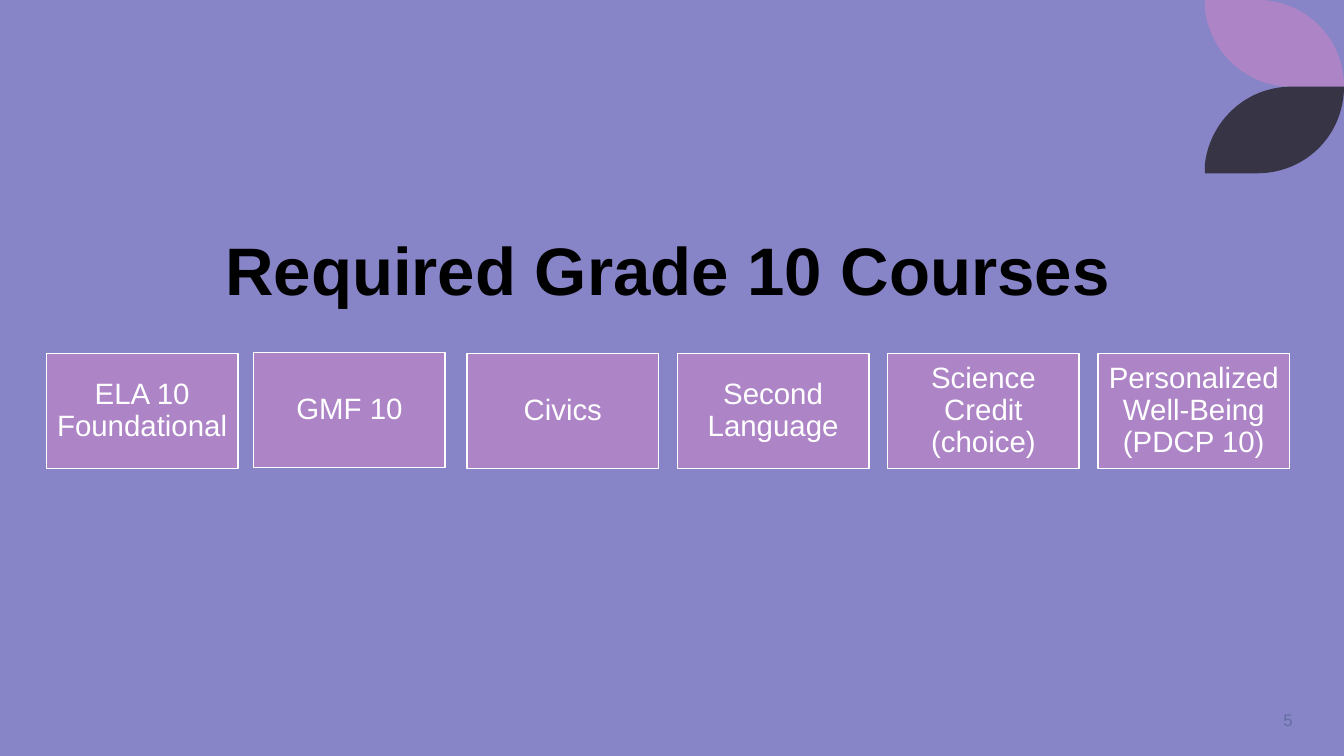
import pptx
import pptx.util
import pptx.dml.color
import pptx.enum.shapes
import pptx.enum.text

Inches, Pt = pptx.util.Inches, pptx.util.Pt
ALIGN, ANCHOR = pptx.enum.text.PP_ALIGN, pptx.enum.text.MSO_ANCHOR

# Content
HEADING = "Required Grade 10 Courses"
PAGE_NUMBER = "5"
COURSES = [
    "ELA 10 Foundational",
    "GMF 10",
    "Civics",
    "Second Language",
    "Science Credit (choice)",
    "Personalized Well-Being (PDCP 10)",
]
NUDGES = {"GMF 10": (-0.03, -0.01)}  # inches off the regular row
COLORS = {
    "background": "8784C7",
    "orchid": "AD84C6",
    "dark": "373545",
    "heading": "000000",
    "white": "FFFFFF",
    "number": "62719F",
}

# Layout in inches
FIRST_LEFT, LAST_LEFT, ROW_TOP = 0.46, 10.89, 3.51
CARD_WIDTH, CARD_HEIGHT, CARD_INSET = 1.9, 1.14, 0.09
PITCH = (LAST_LEFT - FIRST_LEFT) / (len(COURSES) - 1)
LEAF_HEIGHT = 0.86
LEAF_CURVES = [
    [(12.47, 0), (12.95, 0), (13.33, 0.38), (13.33, LEAF_HEIGHT)],
    [(12.81, LEAF_HEIGHT), (12.36, LEAF_HEIGHT), (12, 0.52), (11.95, 0.09)],
]
CURVE_STEPS = 24


def rgb(name):
    return pptx.dml.color.RGBColor.from_string(COLORS[name])


def bezier(points, t):
    weights = ((1 - t) ** 3, 3 * t * (1 - t) ** 2, 3 * t * t * (1 - t), t ** 3)
    return tuple(sum(w * p[axis] for w, p in zip(weights, points)) for axis in (0, 1))


def write(frame, text, size, color, align, anchor, bold=False):
    frame.text = text
    frame.word_wrap = True
    frame.auto_size = pptx.enum.text.MSO_AUTO_SIZE.NONE
    frame.vertical_anchor = anchor
    paragraph = frame.paragraphs[0]
    paragraph.alignment = align
    paragraph.line_spacing = 0.9
    font = paragraph.runs[0].font
    font.name, font.size, font.bold = "Arial", Pt(size), bold
    font.color.rgb = rgb(color)


def add_leaf(slide, color, mirrored):
    outline = [(11.95, 0)] + [
        bezier(curve, step / CURVE_STEPS)
        for curve in LEAF_CURVES for step in range(CURVE_STEPS + 1)
    ]
    if mirrored:
        outline = [(x, 2 * LEAF_HEIGHT - y) for x, y in outline]
    points = [(Inches(x), Inches(y)) for x, y in outline]
    builder = slide.shapes.build_freeform(*points[0])
    builder.add_line_segments(points[1:], close=True)
    leaf = builder.convert_to_shape()
    leaf.shadow.inherit = False
    leaf.fill.solid()
    leaf.fill.fore_color.rgb = rgb(color)
    leaf.line.fill.background()


def add_course(slide, index, course):
    dx, dy = NUDGES.get(course, (0, 0))
    card = slide.shapes.add_shape(
        pptx.enum.shapes.MSO_SHAPE.RECTANGLE,
        Inches(FIRST_LEFT + index * PITCH + dx), Inches(ROW_TOP + dy),
        Inches(CARD_WIDTH), Inches(CARD_HEIGHT))
    card.shadow.inherit = False
    card.fill.solid()
    card.fill.fore_color.rgb = rgb("orchid")
    card.line.color.rgb = rgb("white")
    card.line.width = Pt(1)
    frame = card.text_frame
    frame.margin_left = frame.margin_right = Inches(CARD_INSET)
    frame.margin_top = frame.margin_bottom = Inches(CARD_INSET)
    write(frame, course, 21, "white", ALIGN.CENTER, ANCHOR.MIDDLE)


def main():
    deck = pptx.Presentation()
    deck.slide_width, deck.slide_height = Inches(13.33), Inches(7.5)
    slide = deck.slides.add_slide(deck.slide_layouts[5])
    slide.background.fill.solid()
    slide.background.fill.fore_color.rgb = rgb("background")

    # Corner leaves
    add_leaf(slide, "orchid", mirrored=False)
    add_leaf(slide, "dark", mirrored=True)

    # Heading
    heading = slide.shapes.title
    heading.left, heading.top = Inches(1.28), Inches(1.68)
    heading.width, heading.height = Inches(10.69), Inches(1.45)
    write(heading.text_frame, HEADING, 48, "heading", ALIGN.CENTER, ANCHOR.BOTTOM, bold=True)

    # Course row
    for index, course in enumerate(COURSES):
        add_course(slide, index, course)

    # Page number
    number = slide.shapes.add_textbox(Inches(11.92), Inches(6.95), Inches(1), Inches(0.4))
    write(number.text_frame, PAGE_NUMBER, 12, "number", ALIGN.RIGHT, ANCHOR.MIDDLE)

    deck.save("out.pptx")


if __name__ == "__main__":
    main()
